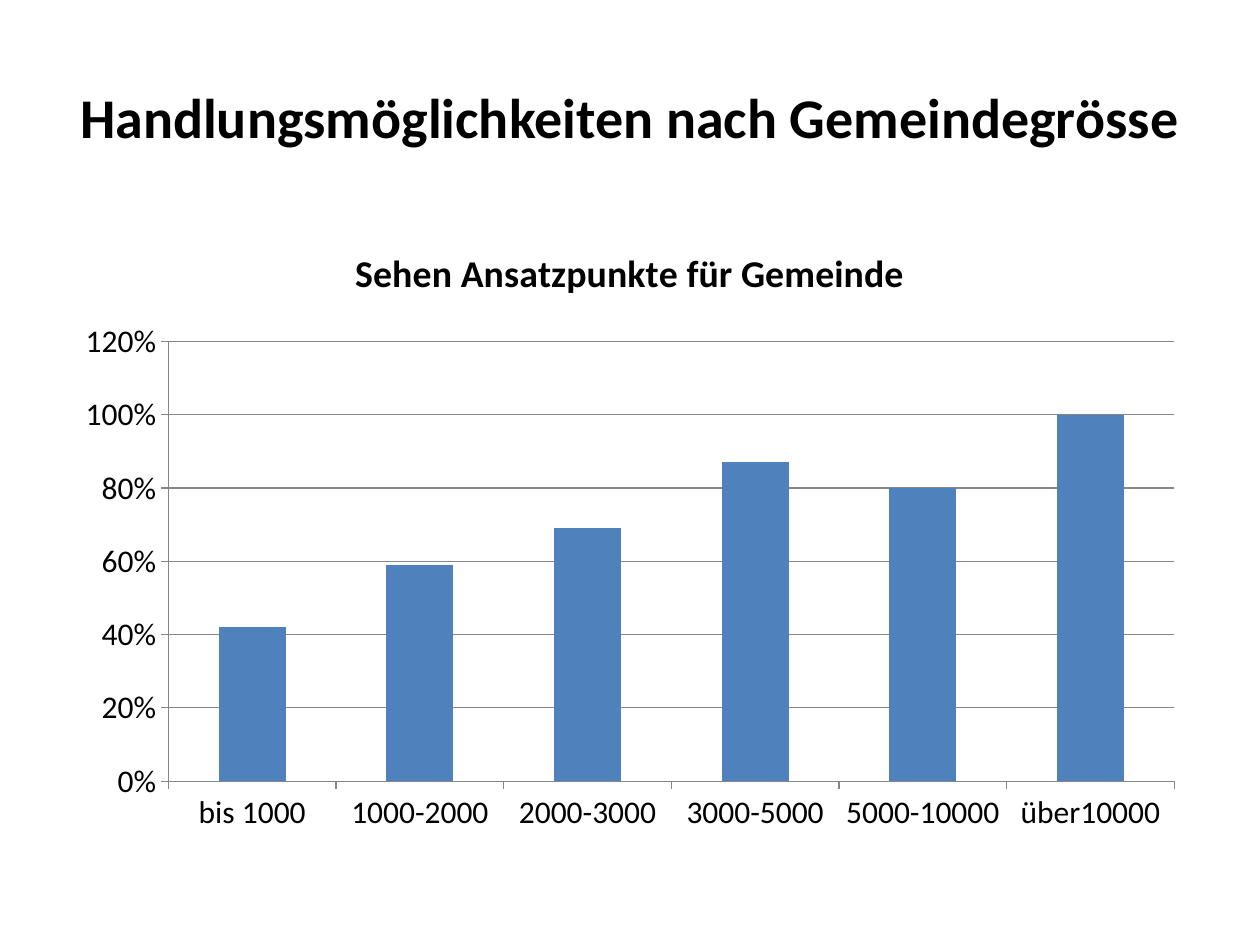
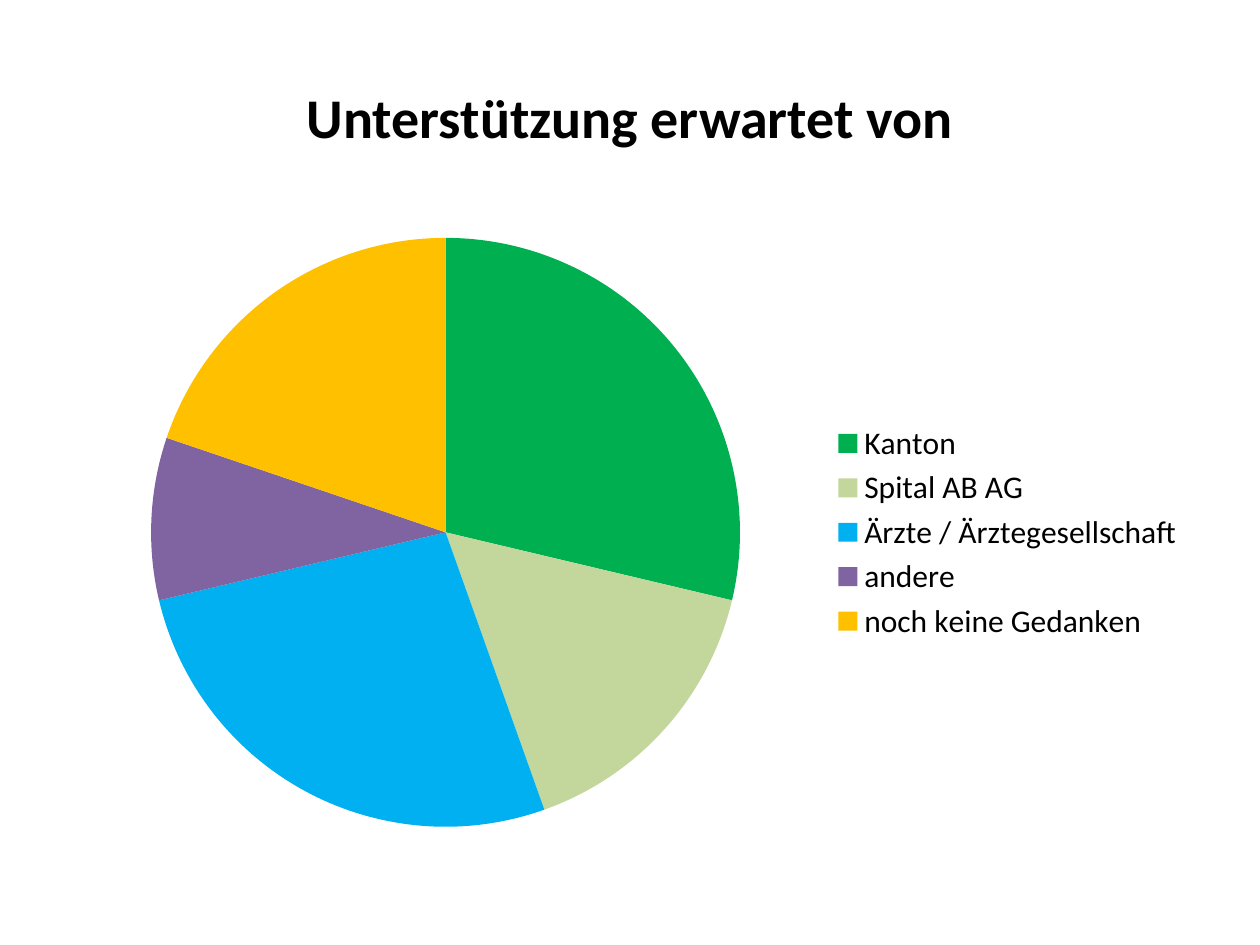
from pptx import Presentation
from pptx.chart.data import CategoryChartData
from pptx.dml.color import RGBColor
from pptx.enum.chart import XL_CHART_TYPE, XL_LEGEND_POSITION, XL_TICK_MARK
from pptx.enum.text import MSO_ANCHOR, PP_ALIGN
from pptx.util import Pt

PX = 9144
FONT = "Calibri"
BLACK = RGBColor(0x00, 0x00, 0x00)
WHITE = RGBColor(0xFF, 0xFF, 0xFF)
GREY = RGBColor(0x86, 0x86, 0x86)
BLUE = RGBColor(0x4F, 0x81, 0xBD)
GREEN = RGBColor(0x00, 0xB0, 0x50)
LIME = RGBColor(0xC3, 0xD6, 0x9B)
SKY = RGBColor(0x00, 0xB0, 0xF0)
PLUM = RGBColor(0x80, 0x64, 0xA2)
GOLD = RGBColor(0xFF, 0xC0, 0x00)
COLUMN = XL_CHART_TYPE.COLUMN_CLUSTERED
PIE = XL_CHART_TYPE.PIE
RIGHT = XL_LEGEND_POSITION.RIGHT
OUT = XL_TICK_MARK.OUTSIDE
NONE = XL_TICK_MARK.NONE
MIDDLE = MSO_ANCHOR.MIDDLE
CENTER = PP_ALIGN.CENTER


def write(frame, text, size=32, bold=True, color=BLACK, align=CENTER):
    para = frame.paragraphs[0]
    para.alignment = align
    run = para.add_run()
    run.text = text
    run.font.name = FONT
    run.font.size = Pt(size)
    run.font.bold = bold
    run.font.color.rgb = color


def add_page(title, kind, names, values, form):
    slide = deck.slides.add_slide(deck.slide_layouts[6])
    slide.background.fill.solid()
    slide.background.fill.fore_color.rgb = WHITE
    box = slide.shapes.add_textbox(50 * PX, 30 * PX, 900 * PX, 125 * PX)
    box.text_frame.word_wrap = True
    box.text_frame.vertical_anchor = MIDDLE
    write(box.text_frame, title)
    data = CategoryChartData(number_format=form)
    data.categories = names
    data.add_series("Series 1", values)
    chart = slide.shapes.add_chart(
        kind, 50 * PX, 175 * PX, 900 * PX, 495 * PX, data).chart
    chart.font.name = FONT
    chart.font.size = Pt(18)
    chart.font.color.rgb = BLACK
    return chart


deck = Presentation()
deck.slide_width = 1000 * PX
deck.slide_height = 750 * PX

sizes = ["bis 1000", "1000-2000", "2000-3000", "3000-5000", "5000-10000", "über10000"]
bars = add_page("Handlungsmöglichkeiten nach Gemeindegrösse", COLUMN, sizes,
                [0.42, 0.59, 0.69, 0.87, 0.8, 1], "0%")
bars.has_legend = False
bars.has_title = True
bars.chart_title.include_in_layout = False
write(bars.chart_title.text_frame, "Sehen Ansatzpunkte für Gemeinde", size=21.6)
plot = bars.plots[0]
plot.gap_width = 150
plot.vary_by_categories = False
fill = plot.series[0].format.fill
fill.solid()
fill.fore_color.rgb = BLUE
for axis in (bars.category_axis, bars.value_axis):
    axis.major_tick_mark = OUT
    axis.minor_tick_mark = NONE
    axis.format.line.color.rgb = GREY
    axis.format.line.width = Pt(0.75)
scale = bars.value_axis
scale.minimum_scale = 0
scale.maximum_scale = 1.2
scale.major_unit = 0.2
scale.tick_labels.number_format = "0%"
scale.tick_labels.number_format_is_linked = False
scale.has_major_gridlines = True
scale.major_gridlines.format.line.color.rgb = GREY
scale.major_gridlines.format.line.width = Pt(0.75)

parts = [
    ("Kanton", 29, GREEN),
    ("Spital AB AG", 16, LIME),
    ("Ärzte / Ärztegesellschaft", 27, SKY),
    ("andere", 9, PLUM),
    ("noch keine Gedanken", 20, GOLD),
]
names, values, colors = zip(*parts)
pie = add_page("Unterstützung erwartet von", PIE, names, values, "General")
pie.has_title = False
pie.has_legend = True
pie.legend.position = RIGHT
pie.legend.include_in_layout = False
pie.plots[0].vary_by_categories = True
for spot, color in enumerate(colors):
    fill = pie.plots[0].series[0].points[spot].format.fill
    fill.solid()
    fill.fore_color.rgb = color

deck.save("out.pptx")
